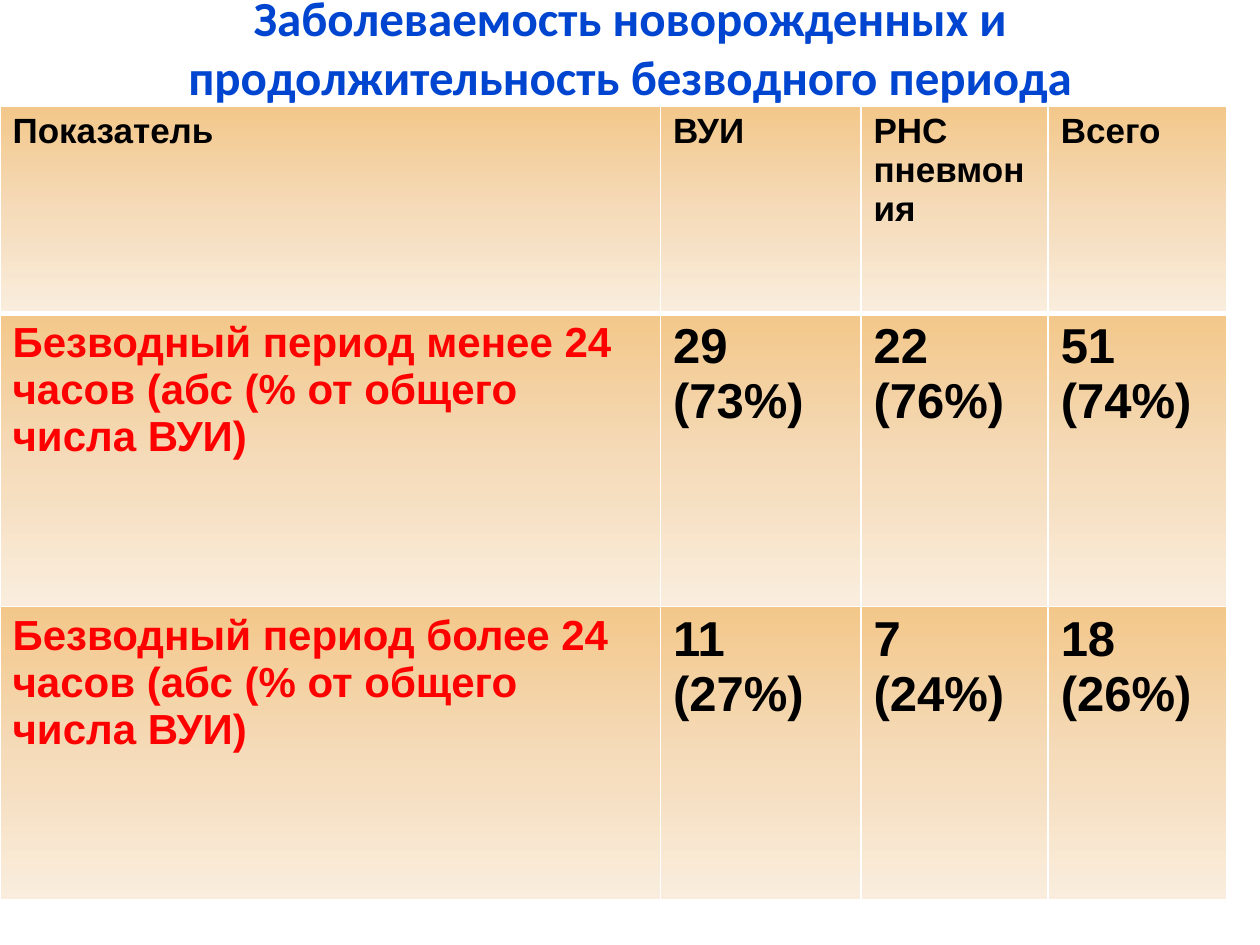
"""Build a slide with a table of newborn morbidity by length of the anhydrous period."""
from dataclasses import dataclass

from lxml.etree import SubElement
from pptx import Presentation
from pptx.dml.color import RGBColor as Color
from pptx.enum.text import MSO_ANCHOR as Anchor, PP_ALIGN as Align
from pptx.oxml.ns import qn
from pptx.util import Pt

TITLE = "Заболеваемость новорожденных и продолжительность безводного периода"
ROWS = [
    ["Показатель", "ВУИ", "РНС\nпневмония", "Всего"],
    ["Безводный период менее 24 часов (абс (% от общего числа ВУИ)",
     "29 (73%)", "22 (76%)", "51 (74%)"],
    ["Безводный период более 24 часов (абс (% от общего числа ВУИ)",
     "11 (27%)", "7 (24%)", "18 (26%)"],
]
TITLE_BOX = (36, -24.5, 648, 102)
TABLE_LEFT, TABLE_TOP = 0, 60.5
COLUMN_WIDTHS = [377.5, 114.5, 107, 102]
ROW_HEIGHTS = [118.5, 167.5, 167.5]


@dataclass(frozen=True)
class Theme:
    title_font: str = "Calibri"
    table_font: str = "Arial"
    title: str = "0045D0"
    text: str = "000000"
    label: str = "FF0000"
    border: str = "FFFFFF"
    gradient: tuple = ((0, "F3C78A"), (50, "F5DBB9"), (100, "FAEDDD"))
    title_size: int = 28
    header_size: int = 20
    label_size: int = 24
    value_size: int = 28
    thin: int = 1
    thick: int = 3


THEME = Theme()


def add_text(para, text, font, size, color):
    span = para.add_run()
    span.text = text
    span.font.name = font
    span.font.size = Pt(size)
    span.font.bold = True
    span.font.color.rgb = Color.from_string(color)


def add_color(parent, color):
    SubElement(parent, qn("a:srgbClr"), val=color)


def paint_cell(cell, top_width, bottom_width):
    properties = cell._tc.get_or_add_tcPr()
    widths = {"L": THEME.thin, "R": THEME.thin, "T": top_width, "B": bottom_width}
    for side, width in widths.items():
        line = SubElement(properties, qn(f"a:ln{side}"), w=str(Pt(width)))
        add_color(SubElement(line, qn("a:solidFill")), THEME.border)
    gradient = SubElement(properties, qn("a:gradFill"), rotWithShape="1")
    stops = SubElement(gradient, qn("a:gsLst"))
    for percent, color in THEME.gradient:
        add_color(SubElement(stops, qn("a:gs"), pos=str(percent * 1000)), color)
    SubElement(gradient, qn("a:lin"), ang=str(90 * 60000), scaled="0")


def cell_style(row, column):
    if row == 0:
        return THEME.header_size, THEME.text
    if column == 0:
        return THEME.label_size, THEME.label
    return THEME.value_size, THEME.text


def add_title(page):
    box = page.shapes.title
    box.left, box.top, box.width, box.height = map(Pt, TITLE_BOX)
    frame = box.text_frame
    frame.word_wrap = True
    frame.vertical_anchor = Anchor.MIDDLE
    para = frame.paragraphs[0]
    para.alignment = Align.CENTER
    add_text(para, TITLE, THEME.title_font, THEME.title_size, THEME.title)


def add_morbidity_table(page):
    table = page.shapes.add_table(
        len(ROWS), len(COLUMN_WIDTHS), Pt(TABLE_LEFT), Pt(TABLE_TOP),
        Pt(sum(COLUMN_WIDTHS)), Pt(sum(ROW_HEIGHTS))).table
    for column, width in zip(table.columns, COLUMN_WIDTHS):
        column.width = Pt(width)
    for row, height in zip(table.rows, ROW_HEIGHTS):
        row.height = Pt(height)
    for r, texts in enumerate(ROWS):
        top_width = THEME.thick if r == 1 else THEME.thin
        bottom_width = THEME.thick if r == 0 else THEME.thin
        for c, text in enumerate(texts):
            cell = table.cell(r, c)
            frame = cell.text_frame
            for i, line in enumerate(text.split("\n")):
                para = frame.add_paragraph() if i else frame.paragraphs[0]
                add_text(para, line, THEME.table_font, *cell_style(r, c))
            paint_cell(cell, top_width, bottom_width)


def main():
    deck = Presentation()
    deck.slide_width, deck.slide_height = Pt(720), Pt(540)
    page = deck.slides.add_slide(deck.slide_layouts[5])
    add_title(page)
    add_morbidity_table(page)
    deck.save("out.pptx")


if __name__ == "__main__":
    main()
